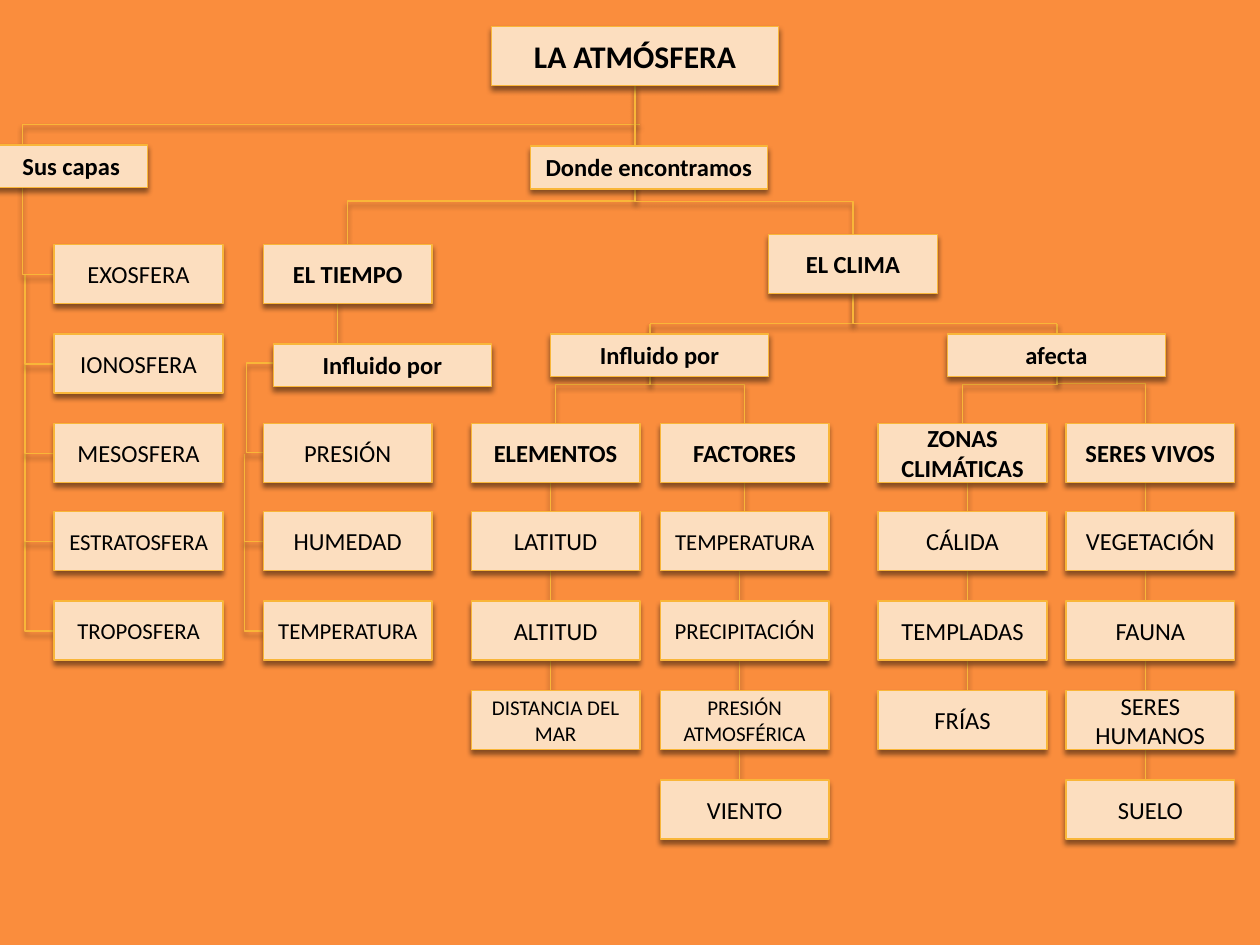
"""Builds a concept map of the atmosphere, its layers, weather and climate."""
from itertools import pairwise
from pptx import Presentation
from pptx.dml.color import RGBColor as RGB
from pptx.enum.shapes import MSO_CONNECTOR as Link, MSO_SHAPE as Kind
from pptx.enum.text import MSO_ANCHOR as Anchor, MSO_AUTO_SIZE as Fit, PP_ALIGN as Align
from pptx.oxml import parse_xml
from pptx.oxml.ns import nsdecls, qn
from pptx.util import Pt

PX = 9144
WIDE, TALL = 1000, 750
BOX_W, BOX_H, TAG_H = 134, 47, 34
ORANGE = RGB(0xFA, 0x8D, 0x3D)
CREAM = RGB(0xFC, 0xDE, 0xBF)
GOLD = RGB(0xF9, 0xB6, 0x39)
BLACK = RGB(0, 0, 0)
SHADE = (
    f'<a:effectLst {nsdecls("a")}><a:outerShdw blurRad="38100" dist="30000" '
    'dir="5400000" rotWithShape="0"><a:srgbClr val="000000">'
    '<a:alpha val="45000"/></a:srgbClr></a:outerShdw></a:effectLst>'
)
SIZES = {
    "ESTRATOSFERA": 13, "TROPOSFERA": 13, "TEMPERATURA": 13, "PRECIPITACIÓN": 13,
    "DISTANCIA DEL MAR": 12, "PRESIÓN ATMOSFÉRICA": 12,
}
HEADS = {"EL TIEMPO", "ELEMENTOS", "FACTORES", "ZONAS CLIMÁTICAS", "SERES VIVOS"}
COLS = [
    (43, 0, None, ["EXOSFERA", "IONOSFERA", "MESOSFERA", "ESTRATOSFERA", "TROPOSFERA"]),
    (209, 0, None, ["EL TIEMPO"]),
    (209, 2, None, ["PRESIÓN", "HUMEDAD", "TEMPERATURA"]),
    (374, 2, 437, ["ELEMENTOS", "LATITUD", "ALTITUD", "DISTANCIA DEL MAR"]),
    (524, 2, 587, ["FACTORES", "TEMPERATURA", "PRECIPITACIÓN", "PRESIÓN ATMOSFÉRICA", "VIENTO"]),
    (697, 2, 768, ["ZONAS CLIMÁTICAS", "CÁLIDA", "TEMPLADAS", "FRÍAS"]),
    (846, 2, 909, ["SERES VIVOS", "VEGETACIÓN", "FAUNA", "SERES HUMANOS", "SUELO"]),
]
TAGS = [
    ("Sus capas", -4, 115, 121),
    ("Donde encontramos", 421, 116, 188),
    ("Influido por", 217, 273, 173),
    ("Influido por", 437, 265, 173),
    ("afecta", 752, 265, 173),
]
BENDS = [
    (504, 68, 677, 186, 0.778), (504, 68, 276, 194, 0.727),
    (677, 233, 839, 257), (677, 233, 516, 257),
    (516, 257, 441, 336, 0.609), (516, 257, 591, 336, 0.609),
    (839, 257, 764, 336, 0.609), (839, 265, 909, 344, 0.5),
    (268, 241, 209, 359, 0.4, 1.23),
]


def row(num):
    """Gives the top of a grid row."""
    return 194 + round(70.8 * num)


class Map:
    """Holds the style and the current slide."""

    def __init__(self, deck):
        """Adds a slide with a plain backdrop."""
        self.slide = deck.slides.add_slide(deck.slide_layouts[5])
        self.shapes = self.slide.shapes
        self.back = self.shapes.add_shape(Kind.RECTANGLE, 0, 0, WIDE * PX, TALL * PX)
        self.back.fill.solid()
        self.back.fill.fore_color.rgb = ORANGE
        self.back.line.fill.background()
        self.back.shadow.inherit = False
        self.shapes.title._element.addprevious(self.back._element)

    def edge(self, item):
        """Gives a shape or connector its gold line and shadow."""
        item.line.color.rgb = GOLD
        item.line.width = Pt(0.79)
        item._element.spPr.append(parse_xml(SHADE))

    def dress(self, item, text, size, bold, anchor=Anchor.MIDDLE, fit=Fit.NONE):
        """Fills a shape and sets its text."""
        item.fill.solid()
        item.fill.fore_color.rgb = CREAM
        self.edge(item)
        frame = item.text_frame
        frame.text = text
        frame.word_wrap = True
        frame.auto_size = fit
        frame.vertical_anchor = anchor
        para = frame.paragraphs[0]
        para.alignment = Align.CENTER
        font = para.font
        font.name, font.size, font.bold = "Calibri", Pt(size), bold
        font.color.rgb = BLACK

    def title(self, text, x, y, w, h):
        """Places the title."""
        item = self.shapes.title
        item.left, item.top, item.width, item.height = (v * PX for v in (x, y, w, h))
        self.dress(item, text, 18, True)

    def box(self, text, x, y, bold=False):
        """Adds a concept box."""
        item = self.shapes.add_shape(Kind.RECTANGLE, x * PX, y * PX, BOX_W * PX, BOX_H * PX)
        self.dress(item, text, SIZES.get(text, 14), bold)
        return item

    def tag(self, text, x, y, w):
        """Adds a linking phrase."""
        item = self.shapes.add_shape(Kind.RECTANGLE, x * PX, y * PX, w * PX, TAG_H * PX)
        self.dress(item, text, 14, True, Anchor.TOP, Fit.SHAPE_TO_FIT_TEXT)

    def line(self, kind, *ends):
        """Adds a connector behind the boxes."""
        item = self.shapes.add_connector(kind, *(round(v * PX) for v in ends))
        self.edge(item)
        self.back._element.addnext(item._element)
        return item

    def bend(self, x1, y1, x2, y2, *turns, down=True):
        """Adds an elbow that leaves downwards, or sideways if not down."""
        ends = x1, y1, x2, y2
        if down:
            midx, midy = (x1 + x2) / 2, (y1 + y2) / 2
            dx, dy = (x2 - x1) / 2, (y2 - y1) / 2
            side = dy if dx < 0 else -dy
            ends = midx - side, midy - abs(dx), midx + side, midy + abs(dx)
        props = self.line(Link.ELBOW, *ends)._element.spPr
        if down:
            props.find(qn("a:xfrm")).set("rot", str((90 if dx < 0 else 270) * 60000))
        geom = props.find(qn("a:prstGeom"))
        geom.set("prst", f"bentConnector{2 + len(turns)}")
        for old in geom:
            geom.remove(old)
        guides = "".join(
            f'<a:gd name="adj{num}" fmla="val {round(turn * 100000)}"/>'
            for num, turn in enumerate(turns, 1)
        )
        if len(turns) == 1:
            guides = guides.replace("adj1", "adj1")
        geom.append(parse_xml(f'<a:avLst {nsdecls("a")}>{guides}</a:avLst>'))

    def column(self, x, first, spine, names):
        """Adds a stack of boxes, joined along a spine if one is given."""
        items = [self.box(name, x, row(num), name in HEADS) for num, name in enumerate(names, first)]
        if spine is None:
            return
        for num, (top, low) in enumerate(pairwise(items), first):
            link = self.line(Link.STRAIGHT, spine, row(num) + BOX_H, spine, row(num + 1))
            if names[0] == "FACTORES" and top is items[0]:
                link.begin_connect(top, 2)
                link.end_connect(low, 0)

    def hooks(self, x, end, first, last):
        """Adds the elbows that step down the left side of a stack."""
        for num in range(first, last):
            self.bend(x, row(num) + 24, end, row(num + 1) + 24)


def main():
    """Builds and saves the map."""
    deck = Presentation()
    deck.slide_width, deck.slide_height = WIDE * PX, TALL * PX
    page = Map(deck)
    page.title("LA ATMÓSFERA", 390, 21, 228, 47)
    for col in COLS:
        page.column(*col)
    page.box("EL CLIMA", 610, 186, True)
    for tag in TAGS:
        page.tag(*tag)
    for bend in BENDS:
        page.bend(*bend)
    page.bend(508, 99, 43, 218, 1.054, down=False)
    page.hooks(20, 43, 0, 4)
    page.hooks(194, 210, 2, 4)
    deck.save("out.pptx")


if __name__ == "__main__":
    main()
